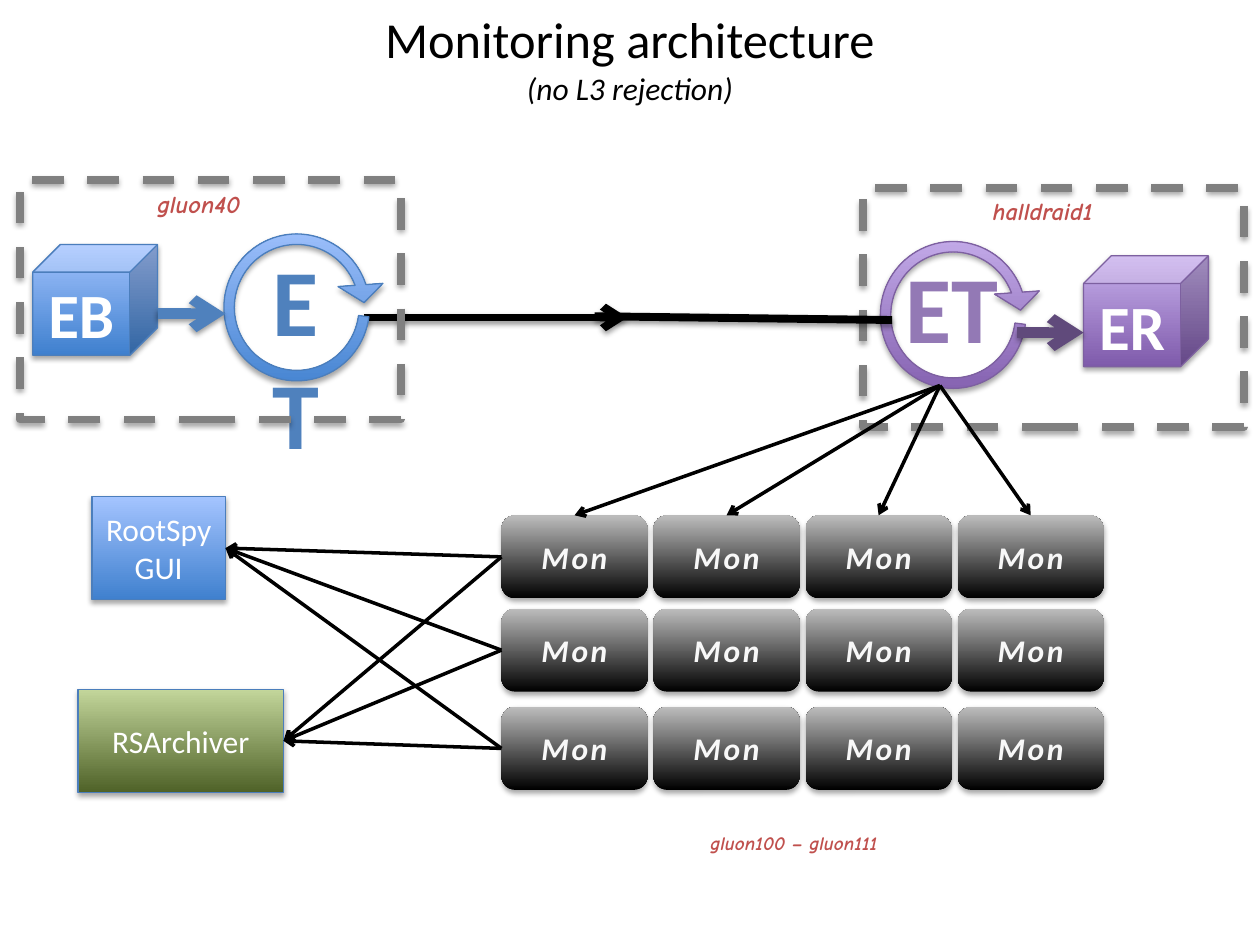
from lxml import etree
from pptx import Presentation
from pptx.dml.color import RGBColor
from pptx.enum.dml import MSO_LINE
from pptx.enum.shapes import MSO_CONNECTOR, MSO_SHAPE
from pptx.enum.text import MSO_ANCHOR, MSO_AUTO_SIZE, PP_ALIGN
from pptx.oxml.ns import qn
from pptx.util import Inches, Pt

RECT, ROUND, CUBE = MSO_SHAPE.RECTANGLE, MSO_SHAPE.ROUNDED_RECTANGLE, MSO_SHAPE.CUBE
RING, STRAIGHT, DASH = MSO_SHAPE.CIRCULAR_ARROW, MSO_CONNECTOR.STRAIGHT, MSO_LINE.DASH
CENTER, LEFT, MIDDLE = PP_ALIGN.CENTER, PP_ALIGN.LEFT, MSO_ANCHOR.MIDDLE
GROW, FIXED = MSO_AUTO_SIZE.SHAPE_TO_FIT_TEXT, MSO_AUTO_SIZE.NONE
TOP, LEFT_SIDE, RIGHT_SIDE = 0, 1, 3

BLUE, BLUE_LINE = ("3F80CE", "A4C4FF"), "4B7EBC"
PURPLE, PURPLE_LINE = ("7F5BAB", "C8B0ED"), "7D60A0"
GREEN, BLACK = ("4F6228", "C3D69B"), ("000000", "BDBDBD")
RING_ADJUSTMENTS = (0.058, 9.183, 204.378, 4.493, 0.125)
HOST = {"name": "Comic Neue", "bold": True, "italic": True}

GLUON = {
    "host": "gluon40", "host_box": (0.99, 0.02, 0.97, 0.34), "cube": "EB", "cube_at": (0.1, 0.51),
    "ring_at": (1.48, 0.29), "ring_box": (1.79, 0.44, 0.79, 0.85), "ring_color": "4F81BD",
    "arrow": (1.09, 1.06, 1.63, 1.06), "arrow_color": "4F81BD", "fill": BLUE, "line": BLUE_LINE,
}
RAID = {
    "host": "halldraid1", "host_box": (0.93, 0.02, 1.21, 0.34), "cube": "ER", "cube_at": (1.75, 0.54),
    "ring_at": (0, 0.29), "ring_box": (0.23, 0.44, 0.95, 1.01), "ring_color": "9379B5",
    "arrow": (1.22, 1.15, 1.75, 1.15), "arrow_color": "604A7B", "fill": PURPLE, "line": PURPLE_LINE,
}


def rgb(color):
    """Turn a hex string into a colour."""
    return RGBColor.from_string(color)


def set_shadow(effects, alpha, dist):
    """Put a soft downward shadow in an effect list."""
    shadow = etree.SubElement(effects, qn("a:outerShdw"), blurRad=str(Pt(3.1)),
                              dist=str(Pt(dist)), dir="5400000", rotWithShape="0")
    color = etree.SubElement(shadow, qn("a:srgbClr"), val="000000")
    etree.SubElement(color, qn("a:alpha"), val=str(alpha * 1000))


def add_run(p, text, size, color, spacing=0, **formats):
    """Add a formatted run to a paragraph."""
    r = p.add_run()
    r.text = text
    r.font.size = Pt(size)
    r.font.color.rgb = rgb(color)
    for key, value in {"name": "Calibri", **formats}.items():
        setattr(r.font, key, value)
    if spacing:
        r.font._element.set("spc", str(round(spacing * 100)))


def add_label(shapes, box, text, size, color, align=LEFT, wrap=False, **formats):
    """Add a text box."""
    tf = shapes.add_textbox(*map(Inches, box)).text_frame
    tf.word_wrap = wrap
    tf.auto_size = GROW
    tf.paragraphs[0].alignment = align
    add_run(tf.paragraphs[0], text, size, color, **formats)


def add_block(shapes, kind, box, fill=None, line=None, width=0.75, text="", size=18,
              color="FFFFFF", **formats):
    """Add a shadowed shape with a vertical gradient and centred text."""
    s = shapes.add_shape(kind, *map(Inches, box))
    s.shadow.inherit = False
    set_shadow(s._element.spPr.find(qn("a:effectLst")), 35, 1.8)
    if fill:
        s.fill.gradient()
        s.fill.gradient_angle = 90
        for stop, position, shade in zip(s.fill.gradient_stops, (0, 1), fill):
            stop.position = position
            stop.color.rgb = rgb(shade)
    else:
        s.fill.background()
    if line:
        s.line.color.rgb = rgb(line)
        s.line.width = Pt(width)
    else:
        s.line.fill.background()
    if text:
        tf = s.text_frame
        tf.vertical_anchor = MIDDLE
        tf.paragraphs[0].alignment = CENTER
        add_run(tf.paragraphs[0], text, size, color, **formats)
    return s


def add_line(shapes, ends, color="000000", width=2, arrow=True, shadow=False):
    """Add a straight line, with an arrowhead at its end if asked."""
    c = shapes.add_connector(STRAIGHT, *map(Inches, ends))
    c.line.color.rgb = rgb(color)
    c.line.width = Pt(width)
    if arrow:
        etree.SubElement(c.line._get_or_add_ln(), qn("a:tailEnd"), type="arrow")
    effects = etree.SubElement(c._element.spPr, qn("a:effectLst"))
    if shadow:
        set_shadow(effects, 38, 1.6)
    return c


def add_title(slide, box):
    """Place the title and its smaller second line."""
    sp = slide.shapes.title
    sp.left, sp.top, sp.width, sp.height = map(Inches, box)
    tf = sp.text_frame
    tf.auto_size = FIXED
    tf.vertical_anchor = MIDDLE
    p = tf.paragraphs[0]
    p.alignment = CENTER
    add_run(p, "Monitoring architecture", 28.8, "000000")
    p.add_line_break()
    add_run(p, "(no L3 rejection)", 18, "000000", italic=True)


def add_host(slide, box, host):
    """Build one dashed host frame with its ring, cube, arrow and name."""
    x, y, w, h = box
    shapes = slide.shapes.add_group_shape().shapes

    def place(dx, dy, *size):
        return (x + dx, y + dy, *size)

    colors = {"fill": host["fill"], "line": host["line"]}
    ring = add_block(shapes, RING, place(*host["ring_at"], 1.43, 1.44), **colors)
    for i, value in enumerate(RING_ADJUSTMENTS):
        ring.adjustments[i] = value
    add_label(shapes, place(*host["ring_box"]), "ET", 54, host["ring_color"], CENTER, True, bold=True)
    add_block(shapes, CUBE, place(*host["cube_at"], 0.99, 0.88), text=host["cube"], size=36,
              bold=True, **colors)
    x1, y1, x2, y2 = host["arrow"]
    add_line(shapes, place(x1, y1, x + x2, y + y2), host["arrow_color"], 6, shadow=True)
    frame = add_block(shapes, RECT, (x, y, w, h), line="808080", width=4.5)
    frame.line.dash_style = DASH
    add_label(shapes, place(*host["host_box"]), host["host"], 14, "C0504D", **HOST)


def add_monitors(slide, box):
    """Build the grid of monitors and return its rows."""
    x, y, w, h = box
    width, height, columns = 1.16, 0.66, 4
    step = (w - width) / (columns - 1)
    rows = [[add_block(slide.shapes, ROUND, (x + i * step, top, width, height), BLACK, text="Mon",
                       color="F8F8F8", spacing=1.5, bold=True, italic=True)
             for i in range(columns)]
            for top in (y, y + 0.74, y + h - height)]
    add_label(slide.shapes, (x + 1.56, y + h + 0.28, 1.7, 0.29), "gluon100 – gluon111", 11,
              "C0504D", wrap=True, **HOST)
    return rows


def add_clients(slide, box, rows):
    """Build the two clients and the arrows that reach them from each monitor row."""
    x, y, w, h = box
    height = 0.82
    gui = add_block(slide.shapes, RECT, (x + 0.11, y, 1.06, height), BLUE, BLUE_LINE,
                    text="RootSpy GUI")
    archiver = add_block(slide.shapes, RECT, (x, y + h - height, w, height), GREEN, BLUE_LINE,
                         text="RSArchiver")
    for client in (gui, archiver):
        for row in rows:
            c = add_line(slide.shapes, (0, 0, 1, 1))
            c.begin_connect(row[0], LEFT_SIDE)
            c.end_connect(client, RIGHT_SIDE)


def main():
    """Build the slide and save it."""
    prs = Presentation()
    prs.slide_width, prs.slide_height = Inches(10), Inches(7.5)
    slide = prs.slides.add_slide(prs.slide_layouts[5])
    add_title(slide, (0.5, 0.06, 9, 0.79))
    add_line(slide.shapes, (2.89, 2.52, 4.98, 2.52), width=4.5, shadow=True)
    add_host(slide, (0.16, 1.43, 3.02, 1.9), GLUON)
    add_host(slide, (6.85, 1.49, 3.02, 1.9), RAID)
    rows = add_monitors(slide, (3.98, 4.09, 4.78, 2.18))
    add_line(slide.shapes, (4.72, 2.51, 7.08, 2.54), width=4.5, arrow=False, shadow=True)
    for monitor in rows[0]:
        c = add_line(slide.shapes, (7.46, 3.06, 8, 4))
        c.end_connect(monitor, TOP)
    add_clients(slide, (0.62, 3.94, 1.63, 2.35), rows)
    prs.save("out.pptx")


if __name__ == "__main__":
    main()
